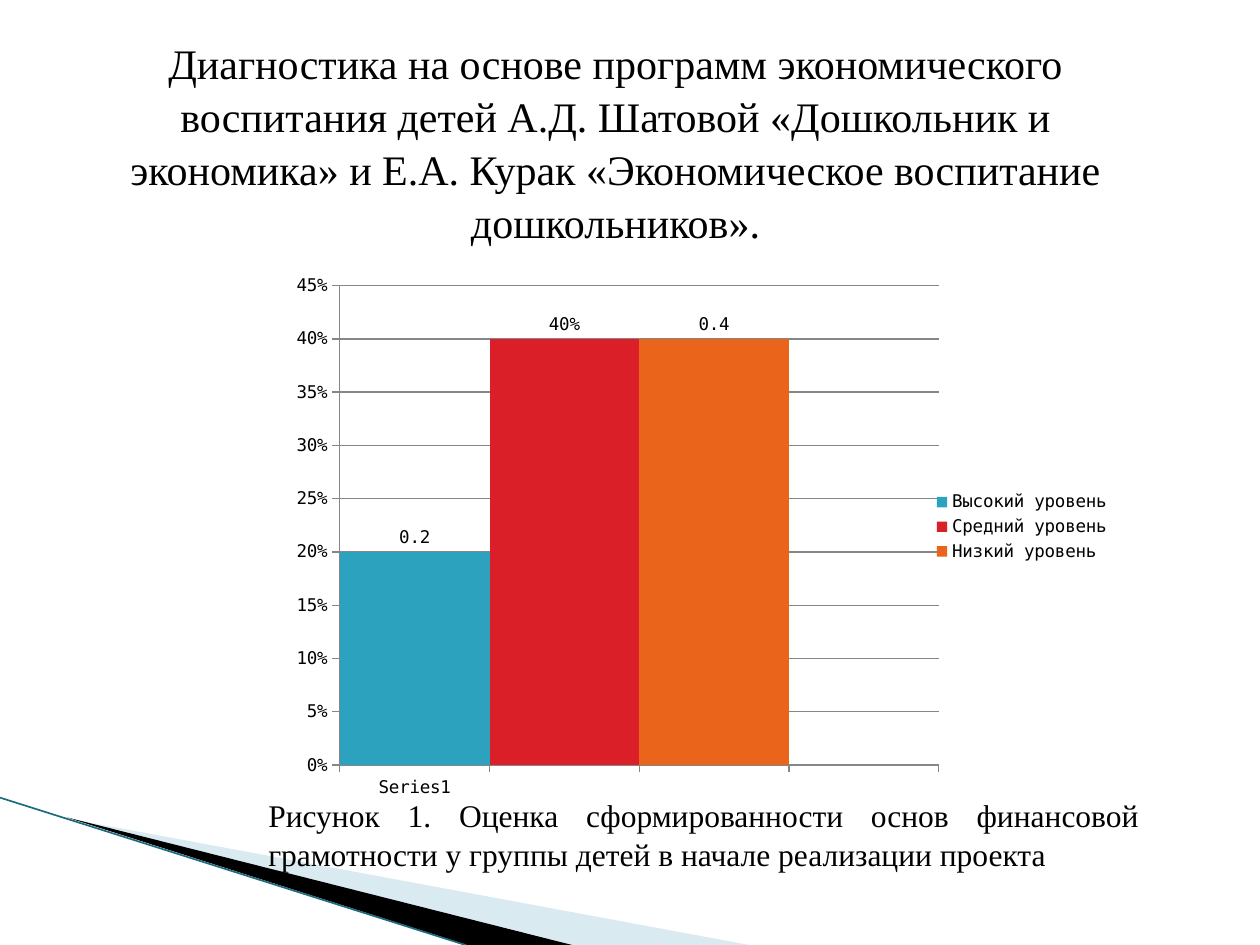
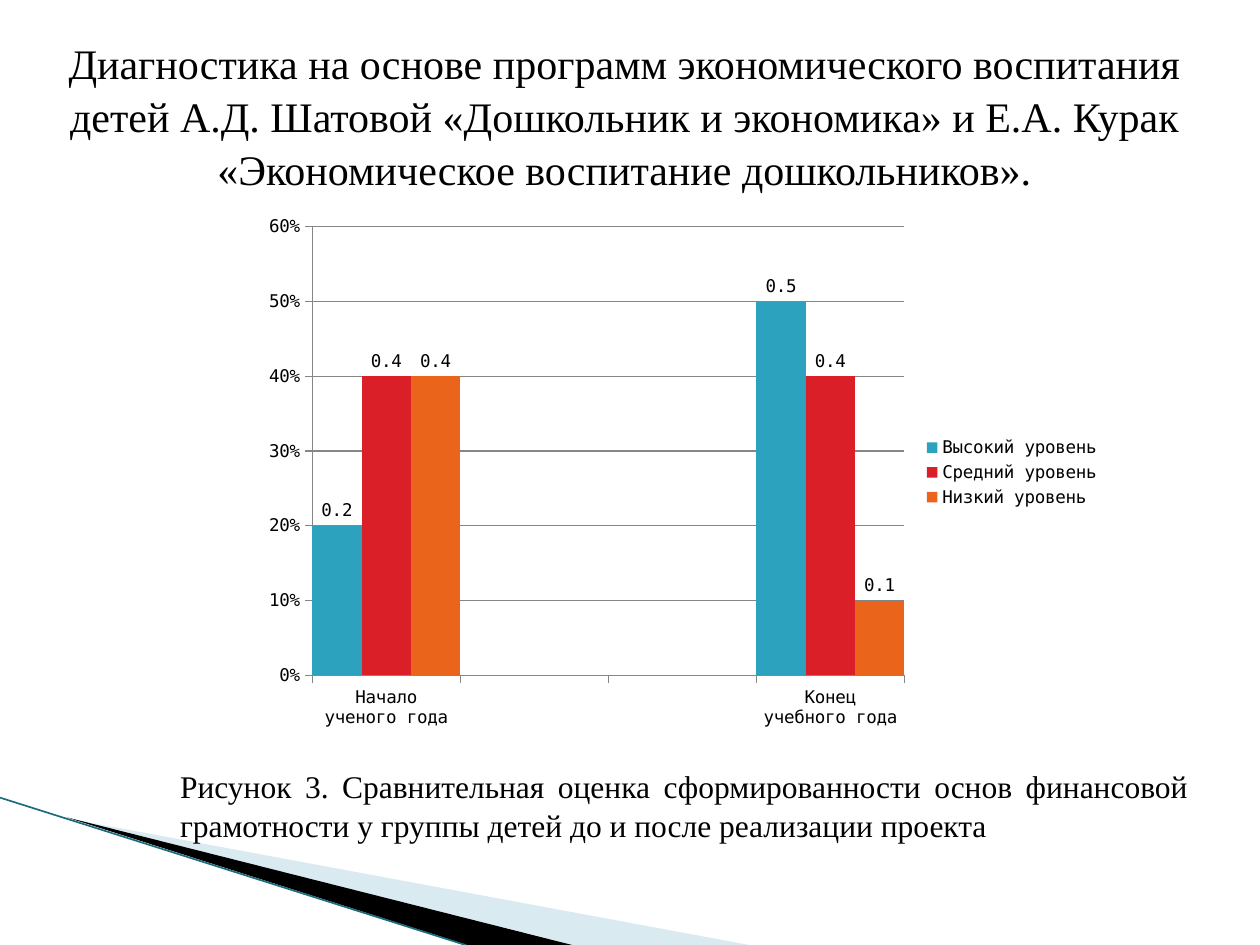
import pptx
import pptx.util
import pptx.chart.data
import pptx.dml.color
import pptx.enum.chart
import pptx.enum.shapes
import pptx.enum.text
import pptx.oxml
import pptx.oxml.ns
from lxml import etree

Pt = pptx.util.Pt
RGBColor = pptx.dml.color.RGBColor
qn = pptx.oxml.ns.qn
PP_ALIGN = pptx.enum.text.PP_ALIGN

BLACK = RGBColor(0x00, 0x00, 0x00)
PALE_BLUE = RGBColor(0xA0, 0xCB, 0xDC)
TEAL = RGBColor(0x1C, 0x6C, 0x80)
GRID_GREY = RGBColor(0x86, 0x86, 0x86)
LEVELS = {
    "Высокий уровень": RGBColor(0x2D, 0xA2, 0xBF),
    "Средний уровень": RGBColor(0xDA, 0x1F, 0x28),
    "Низкий уровень": RGBColor(0xEB, 0x64, 0x1B),
}
TEXT_FONT = "Times New Roman"
CHART_FONT = "DejaVu Sans Mono"
WIDTH, HEIGHT = 720, 540
TITLE = ("Диагностика на основе программ экономического воспитания детей "
         "А.Д. Шатовой «Дошкольник и экономика» и Е.А. Курак "
         "«Экономическое воспитание дошкольников».")


def set_text(shape, text, size, align):
    tf = shape.text_frame
    tf.text = text
    tf.word_wrap = True
    tf.auto_size = pptx.enum.text.MSO_AUTO_SIZE.NONE
    tf.vertical_anchor = pptx.enum.text.MSO_ANCHOR.TOP
    p = tf.paragraphs[0]
    p.alignment = align
    p.line_spacing = 1.05
    font = p.runs[0].font
    font.name, font.size, font.color.rgb = TEXT_FONT, Pt(size), BLACK


def add_title(s, box):
    title = s.shapes.title
    title.left, title.top, title.width, title.height = map(Pt, box)
    set_text(title, TITLE, 24, PP_ALIGN.CENTER)


def add_caption(s, box, text):
    set_text(s.shapes.add_textbox(*map(Pt, box)), text, 18, PP_ALIGN.JUSTIFY)


def add_wedge(s, points, color, opacity=100):
    builder = s.shapes.build_freeform(*points[0], scale=Pt(1))
    builder.add_line_segments(points[1:], close=True)
    sp = builder.convert_to_shape()
    sp.shadow.inherit = False
    sp.fill.solid()
    sp.fill.fore_color.rgb = color
    sp.line.fill.background()
    if opacity < 100:
        clr = sp.fill._xPr.find(".//" + qn("a:srgbClr"))
        etree.SubElement(clr, qn("a:alpha"), val=str(opacity * 1000))


def add_corner(s):
    """Wedges and edge line in the bottom left corner."""
    add_wedge(s, [(39.6, 468), (428, HEIGHT), (328, HEIGHT)], PALE_BLUE, 40)
    add_wedge(s, [(38.2, 467.3), (327, HEIGHT), (267, HEIGHT)], BLACK)
    edge = s.shapes.add_connector(pptx.enum.shapes.MSO_CONNECTOR.STRAIGHT,
                                  Pt(0), Pt(455.8), Pt(266), Pt(HEIGHT))
    edge.line.color.rgb = TEAL
    edge.line.width = Pt(0.95)
    etree.SubElement(edge._element.spPr, qn("a:effectLst"))


def set_plot_area(chart, x, y, w, h):
    """Fix the inner plot area, in fractions of the chart."""
    area = chart._chartSpace.find(".//" + qn("c:plotArea"))
    for old in area.findall(qn("c:layout")):
        area.remove(old)
    layout = etree.Element(qn("c:layout"))
    manual = etree.SubElement(layout, qn("c:manualLayout"))
    settings = {"layoutTarget": "inner", "xMode": "edge", "yMode": "edge",
                "x": x, "y": y, "w": w, "h": h}
    for name, value in settings.items():
        etree.SubElement(manual, qn("c:" + name), val=str(value))
    area.insert(0, layout)


def add_level_chart(s, box, categories, values, formats, overlap, top, step, plot_area):
    data = pptx.chart.data.CategoryChartData(number_format="0%")
    data.categories = categories
    for name, vals in zip(LEVELS, values):
        data.add_series(name, vals)
    chart = s.shapes.add_chart(pptx.enum.chart.XL_CHART_TYPE.COLUMN_CLUSTERED,
                               *map(Pt, box), data).chart
    chart.has_title = False
    chart.font.name, chart.font.size = CHART_FONT, Pt(10)
    chart.font.color.rgb = BLACK
    chart.has_legend = True
    chart.legend.position = pptx.enum.chart.XL_LEGEND_POSITION.RIGHT
    chart.legend.include_in_layout = False
    set_plot_area(chart, *plot_area)

    # Columns and their labels
    plot = chart.plots[0]
    plot.gap_width, plot.overlap = 0, overlap
    plot.vary_by_categories = False
    for series, color, number_format in zip(plot.series, LEVELS.values(), formats):
        series.format.fill.solid()
        series.format.fill.fore_color.rgb = color
        series.invert_if_negative = False
        labels = series.data_labels
        labels.show_value = True
        labels.number_format, labels.number_format_is_linked = number_format, False
        labels.position = pptx.enum.chart.XL_LABEL_POSITION.OUTSIDE_END

    # Axes
    axis = chart.value_axis
    axis.minimum_scale, axis.maximum_scale, axis.major_unit = 0, top, step
    axis.tick_labels.number_format = "0%"
    axis.tick_labels.number_format_is_linked = False
    axis.has_major_gridlines = True
    for part in (axis, axis.major_gridlines, chart.category_axis):
        part.format.line.color.rgb = GRID_GREY
        part.format.line.width = Pt(0.75)
    for part in (axis, chart.category_axis):
        part.major_tick_mark = pptx.enum.chart.XL_TICK_MARK.OUTSIDE


def add_diagnostic_slide(prs, title_box, chart_box, caption_box, caption, **chart):
    s = prs.slides.add_slide(prs.slide_layouts[5])
    add_corner(s)
    add_title(s, title_box)
    add_level_chart(s, chart_box, **chart)
    add_caption(s, caption_box, caption)


def main():
    prs = pptx.Presentation()
    prs.slide_width, prs.slide_height = Pt(WIDTH), Pt(HEIGHT)

    # Start of the project
    add_diagnostic_slide(
        prs, (39.6, 16.6, 624.2, 123.8), (123.8, 146.2, 517.7, 309.6),
        (146.2, 450, 511.9, 51.1),
        "Рисунок 1. Оценка сформированности основ финансовой грамотности "
        "у группы детей в начале реализации проекта",
        categories=["Series1", "", "", ""],
        values=[(0.2, None, None, None), (None, 0.4, None, None),
                (None, None, 0.4, None)],
        formats=["General", "0%", "General"], overlap=100, top=0.45, step=0.05,
        plot_area=(0.136, 0.055, 0.661, 0.885))

    # Before and after
    add_diagnostic_slide(
        prs, (16.6, 16.6, 680.4, 94.3), (144, 118.1, 491.8, 303.8),
        (95.8, 433.4, 590.4, 51.1),
        "Рисунок 3. Сравнительная оценка сформированности основ финансовой "
        "грамотности у группы детей до и после реализации проекта",
        categories=["Начало ученого года", "", "", "Конец учебного года"],
        values=[(0.2, None, None, 0.5), (0.4, None, None, 0.4),
                (0.4, None, None, 0.1)],
        formats=["General"] * 3, overlap=0, top=0.6, step=0.1,
        plot_area=(0.07, 0.038, 0.688, 0.844))

    prs.save("out.pptx")


if __name__ == "__main__":
    main()
